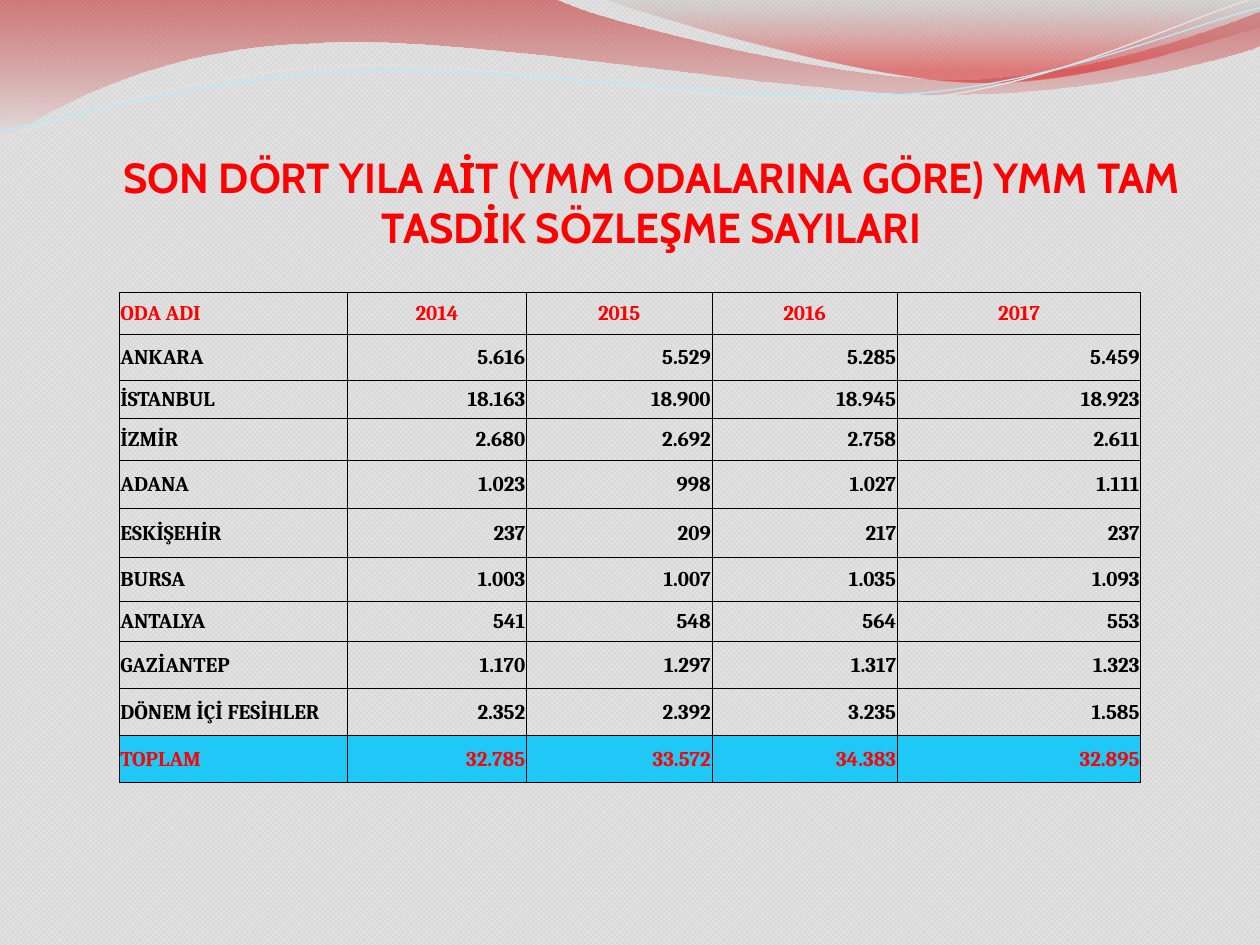
from math import cos, radians, sin

from lxml.etree import SubElement
from pptx import Presentation
from pptx.dml.color import RGBColor
from pptx.enum.dml import MSO_PATTERN
from pptx.enum.text import MSO_ANCHOR, PP_ALIGN
from pptx.oxml.ns import qn
from pptx.util import Inches, Pt

COLORS = {
    "paper": "D9D9D9", "weave": "F2F2F2", "accent": "FF0000", "ink": "000000",
    "total": "20C8F7", "crimson": "BD0000", "mist": "E7E7E7", "silver": "BDBDBD",
    "scarlet": "E10000", "pale_line": "E1E1E1", "cyan_line": "B4ECFC",
}
GRID_COLUMNS, GRID_ROWS = 100, 75
TILT = 2.7

TITLE = "SON DÖRT YILA AİT (YMM ODALARINA GÖRE) YMM TAM TASDİK SÖZLEŞME SAYILARI"
CHAMBERS = [
    ["ODA ADI", "2014", "2015", "2016", "2017"],
    ["ANKARA", "5.616", "5.529", "5.285", "5.459"],
    ["İSTANBUL", "18.163", "18.900", "18.945", "18.923"],
    ["İZMİR", "2.680", "2.692", "2.758", "2.611"],
    ["ADANA", "1.023", "998", "1.027", "1.111"],
    ["ESKİŞEHİR", "237", "209", "217", "237"],
    ["BURSA", "1.003", "1.007", "1.035", "1.093"],
    ["ANTALYA", "541", "548", "564", "553"],
    ["GAZİANTEP", "1.170", "1.297", "1.317", "1.323"],
    ["DÖNEM İÇİ FESİHLER", "2.352", "2.392", "3.235", "1.585"],
    ["TOPLAM", "32.785", "33.572", "34.383", "32.895"],
]
COLUMN_WIDTHS = [18.13, 14.2, 14.72, 14.72, 19.32]
ROW_HEIGHTS = [3.34, 3.64, 3.02, 3.34, 3.81, 3.88, 3.5, 3.17, 3.74, 3.73, 3.73]

LEFT_WAVE = [
    (0, 0), (44, -0.1), (47.6, 1.7, 66.4, 6.3, 75.8, 6.3),
    (85.3, 6.3, 95.8, 2.6, 100, 0.9), (100.1, 3.6),
    (98.3, 4.4, 87, 7.6, 74.6, 7.5), (62.2, 7.5, 38.2, 2.8, 25.7, 3.4),
    (12.9, 3.6, 4.6, 8.3, -0.1, 11.3),
]
RIGHT_WAVE = [
    (47.9, -0.1), (50.9, 1.1, 68.2, 6.2, 76.9, 6.5),
    (85.6, 6.9, 96.1, 3.2, 100, 2.1), (100, 0),
]
PALE_CURVE = [
    (0, 11.1), (4.8, 9.3, 15.8, 5.7, 27.7, 5.2),
    (39.5, 4.7, 59.3, 8.9, 71.3, 8), (83.3, 7.1, 93.8, 1.5, 99.8, -0.2),
]
CYAN_CURVE = [
    (0, 10.4), (4.7, 9.6, 16.4, 6.1, 28.3, 5.6),
    (40.3, 5.1, 59.7, 8.4, 71.7, 7.5), (83.6, 6.7, 94.1, 2.1, 100, 0.6),
]


def color(name):
    return RGBColor.from_string(COLORS[name])


def pairs(segment):
    return list(zip(segment[::2], segment[1::2]))


def turn(segment, center, degrees):
    cosine, sine = cos(radians(degrees)), sin(radians(degrees))
    turned = []
    for x, y in pairs(segment):
        across, down = x - center[0], y - center[1]
        turned += [center[0] + across * cosine - down * sine,
                   center[1] + across * sine + down * cosine]
    return tuple(turned)


class SlideBuilder:
    """Holds the style and current slide, and places elements on its grid."""

    def __init__(self, presentation):
        self.slide = presentation.slides.add_slide(presentation.slide_layouts[6])
        self.column = presentation.slide_width / GRID_COLUMNS
        self.row = presentation.slide_height / GRID_ROWS
        self.title_font, self.title_size = "Cabin", Pt(24)
        self.table_font, self.table_size = "Cambria", Pt(12)

    def across(self, columns):
        return round(columns * self.column)

    def down(self, rows):
        return round(rows * self.row)

    def background(self, foreground, back):
        fill = self.slide.background.fill
        fill.patterned()
        fill.pattern = MSO_PATTERN.TRELLIS
        fill.fore_color.rgb = color(foreground)
        fill.back_color.rgb = color(back)

    def outline(self, segments, close):
        points = [(self.across(x), self.down(y))
                  for segment in segments for x, y in pairs(segment)]
        builder = self.slide.shapes.build_freeform(*points[0])
        builder.add_line_segments(points[1:], close=close)
        shape = builder.convert_to_shape()
        shape.shadow.inherit = False
        lines = iter(shape.element.spPr.findall(".//" + qn("a:lnTo")))
        for segment in segments[1:]:
            line = next(lines)
            if len(segment) == 6:
                line.tag = qn("a:cubicBezTo")
                for _ in range(2):
                    extra = next(lines)
                    line.append(extra[0])
                    extra.getparent().remove(extra)
        return shape

    def wave(self, segments, stops):
        shape = self.outline(segments, True)
        shape.line.fill.background()
        shape.fill.gradient()
        shape.fill.gradient_angle = 270
        for stop, (name, position, _) in zip(shape.fill.gradient_stops, stops):
            stop.color.rgb = color(name)
            stop.position = position
        shades = shape.element.spPr.findall(".//" + qn("a:srgbClr"))
        for shade, (_, _, opacity) in zip(shades, stops):
            SubElement(shade, qn("a:alpha"), val=str(opacity * 1000))

    def curve(self, segments, center, name, width):
        shape = self.outline([turn(segment, center, TILT) for segment in segments], False)
        shape.rotation = -TILT
        shape.fill.background()
        shape.line.color.rgb = color(name)
        shape.line.width = Pt(width)
        return shape

    def group(self, shapes):
        self.slide.shapes.add_group_shape(shapes)

    def style(self, paragraph, font, size, name, alignment):
        paragraph.alignment = alignment
        paragraph.font.name = font
        paragraph.font.size = size
        paragraph.font.bold = True
        paragraph.font.color.rgb = color(name)

    def title(self, text, left, top, width, height, bottom_margin):
        shape = self.slide.shapes.add_textbox(
            self.across(left), self.down(top), self.across(width), self.down(height))
        frame = shape.text_frame
        frame.word_wrap = True
        frame.vertical_anchor = MSO_ANCHOR.BOTTOM
        frame.margin_left = frame.margin_right = 0
        frame.margin_bottom = self.down(bottom_margin)
        frame.text = text
        self.style(frame.paragraphs[0], self.title_font, self.title_size,
                   "accent", PP_ALIGN.CENTER)

    def borders(self, cell):
        properties = cell._tc.get_or_add_tcPr()
        for side in ("lnL", "lnR", "lnT", "lnB"):
            line = SubElement(properties, qn(f"a:{side}"), w=str(Pt(0.5)))
            fill = SubElement(line, qn("a:solidFill"))
            SubElement(fill, qn("a:srgbClr"), val=COLORS["ink"])

    def cell(self, cell, text, alignment, name, fill_name):
        cell.text = text
        cell.vertical_anchor = MSO_ANCHOR.MIDDLE
        cell.margin_left = cell.margin_right = cell.margin_top = Inches(0.01)
        cell.margin_bottom = 0
        self.borders(cell)
        if fill_name:
            cell.fill.solid()
            cell.fill.fore_color.rgb = color(fill_name)
        else:
            cell.fill.background()
        self.style(cell.text_frame.paragraphs[0], self.table_font, self.table_size,
                   name, alignment)

    def table(self, records, left, top, widths, heights):
        table = self.slide.shapes.add_table(
            len(records), len(widths), self.across(left), self.down(top),
            self.across(sum(widths)), self.down(sum(heights))).table
        table.first_row = table.horz_banding = False
        for column, width in zip(table.columns, widths):
            column.width = self.across(width)
        last = len(records) - 1
        for index, (record, height) in enumerate(zip(records, heights)):
            table.rows[index].height = self.down(height)
            name = "accent" if index in (0, last) else "ink"
            number_alignment = PP_ALIGN.RIGHT if index else PP_ALIGN.CENTER
            for position, text in enumerate(record):
                self.cell(table.cell(index, position), text,
                          number_alignment if position else PP_ALIGN.LEFT, name,
                          "total" if index == last else None)


def main():
    presentation = Presentation()
    presentation.slide_width, presentation.slide_height = Inches(10), Inches(7.5)
    builder = SlideBuilder(presentation)
    builder.background("weave", "paper")
    builder.wave(LEFT_WAVE, [("crimson", 0, 45), ("mist", 1, 55)])
    builder.wave(RIGHT_WAVE, [("silver", 0, 30), ("scarlet", 0.8, 45)])
    builder.group([
        builder.curve(PALE_CURVE, (49.9, 5.75), "pale_line", 0.85),
        builder.curve(CYAN_CURVE, (49.95, 5.9), "cyan_line", 0.75),
    ])
    builder.title(TITLE, 6.7, 11.5, 90, 12.5, 4)
    builder.table(CHAMBERS, 9.46, 23.2, COLUMN_WIDTHS, ROW_HEIGHTS)
    presentation.save("out.pptx")


if __name__ == "__main__":
    main()
